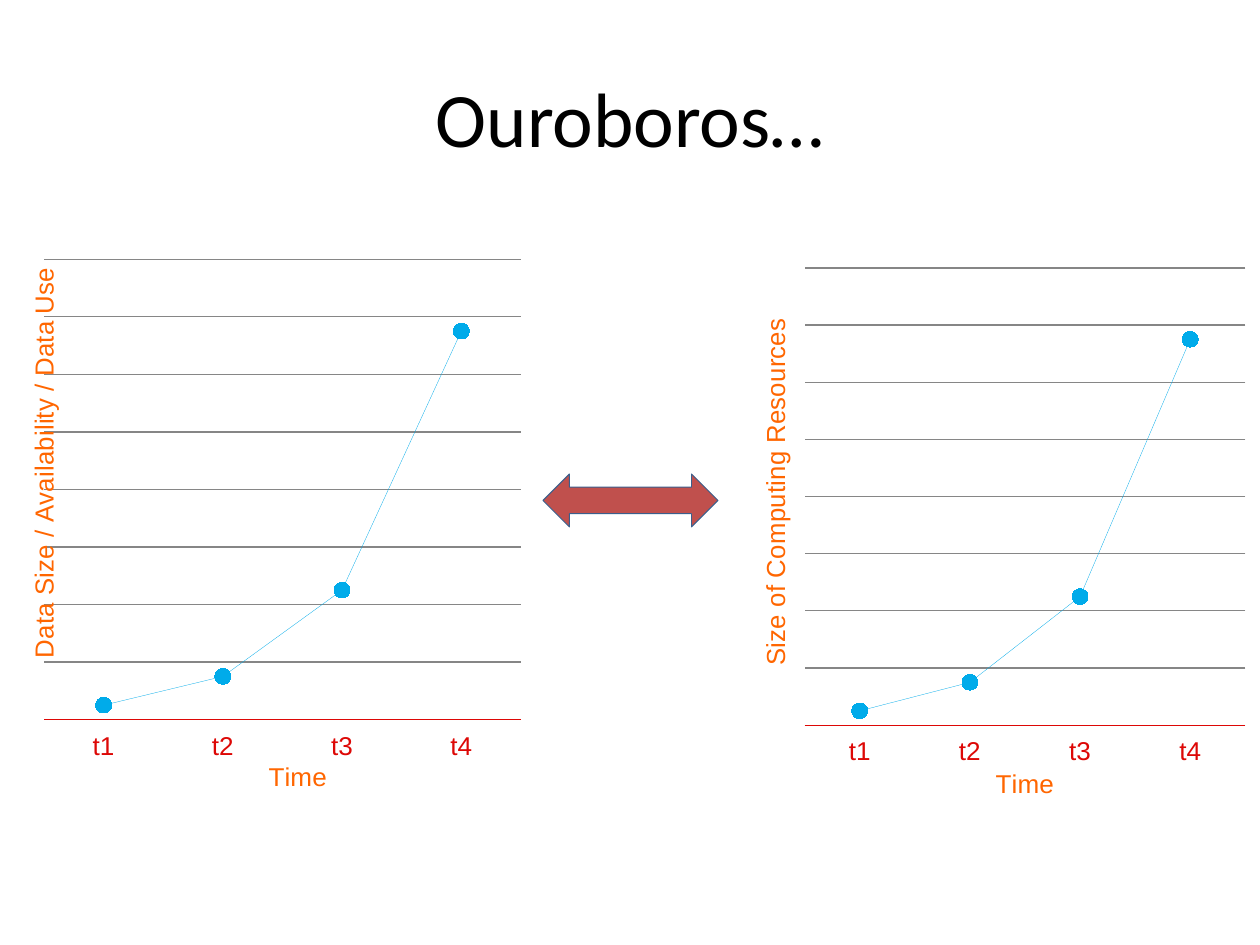
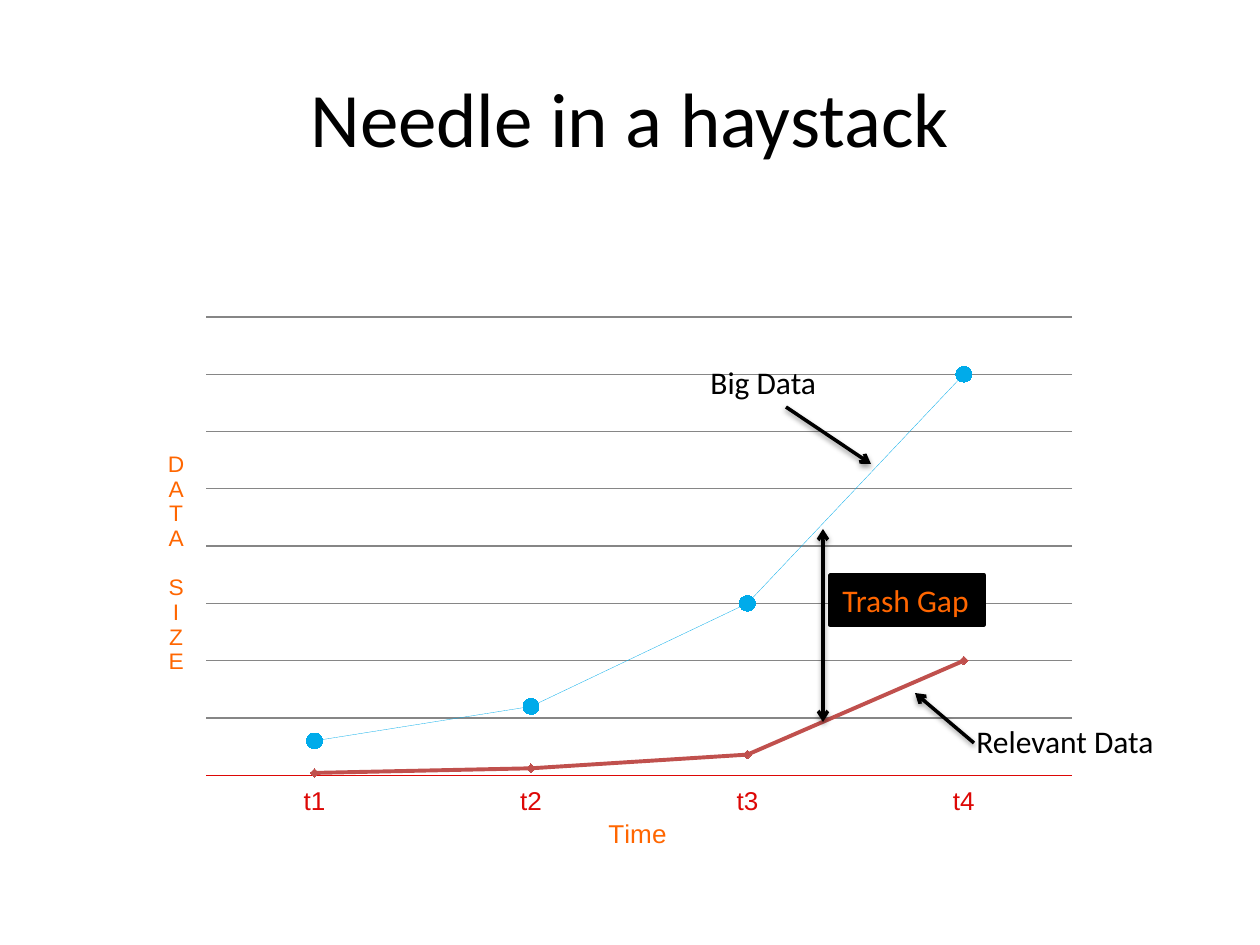
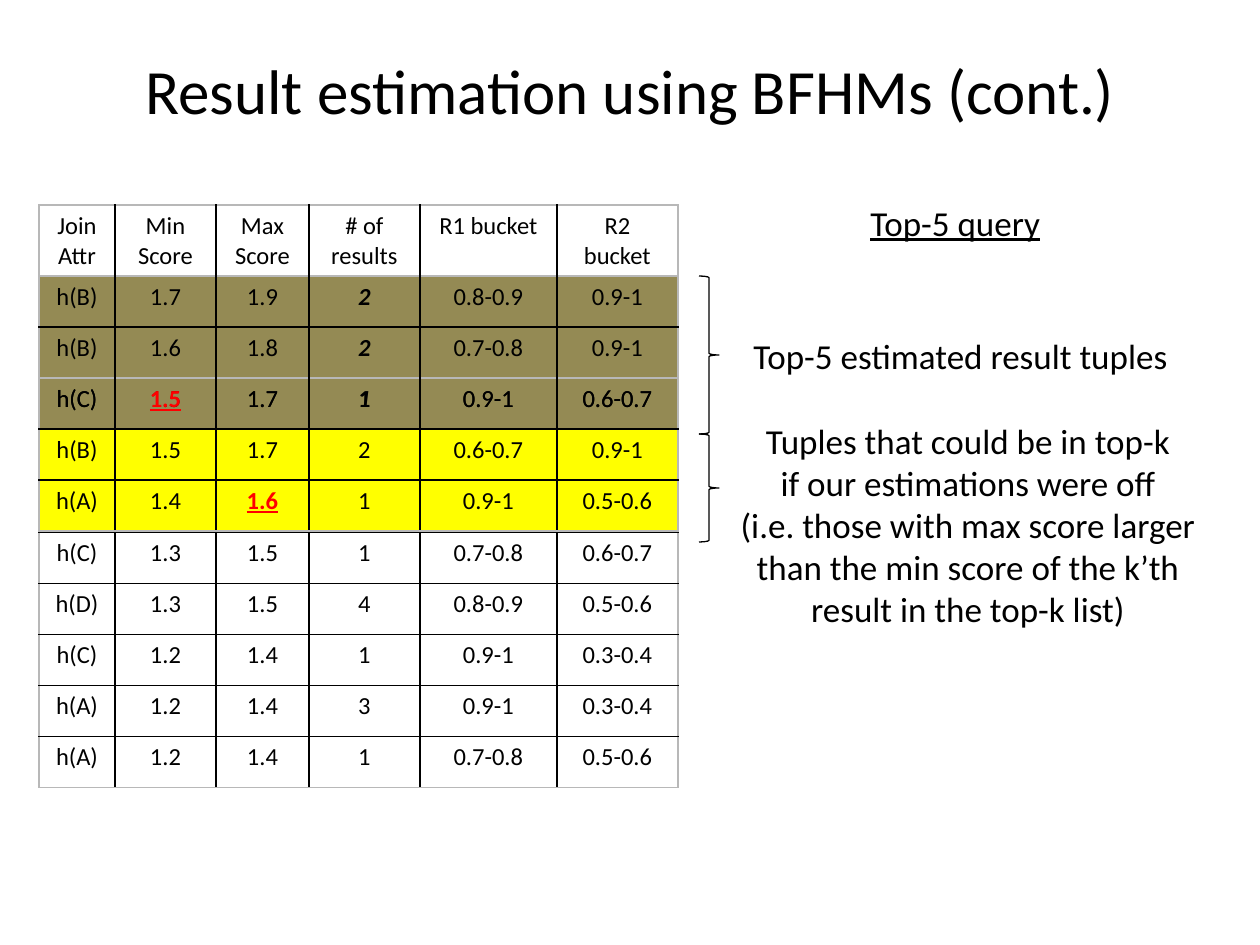
import pptx
import pptx.chart.data
import pptx.dml.color
import pptx.enum.chart
import pptx.enum.shapes
import pptx.enum.text
import pptx.oxml
import pptx.oxml.ns
import pptx.util

PX_PER_INCH = 126
COLORS = {
    "text": "000000", "accent": "FF6600", "blue": "00ABEA", "red": "C0504D",
    "axis": "DD0806", "grid": "868686", "arrow_line": "3A5F8C", "edge": "B8B8B8",
    "olive": "948A54", "yellow": "FFFF00", "alert": "FF0000",
}
SHAPES = pptx.enum.shapes.MSO_SHAPE
CENTER = pptx.enum.text.PP_ALIGN.CENTER
LEFT = pptx.enum.text.PP_ALIGN.LEFT
Pt = pptx.util.Pt
qn = pptx.oxml.ns.qn

TIMES = ["t1", "t2", "t3", "t4"]
GROWTH = [("Region 1", [5, 15, 45, 135])]
DATA_SIZES = [("Series 1", [30, 60, 150, 350]), ("Series 2", [2, 6, 18, 100])]

COLUMN_WIDTHS = [76, 101, 93, 111, 137, 121]
HEADER_H, ROW_H = 71, 51
TABLE_LEFT, TABLE_TOP = 39, 205
HEADER = ["Join Attr", "Min Score", "Max Score", "# of results", "R1 bucket", "R2 bucket"]
RESULTS = [
    ["h(B)", "1.7", "1.9", "2", "0.8-0.9", "0.9-1"],
    ["h(B)", "1.6", "1.8", "2", "0.7-0.8", "0.9-1"],
    ["h(C)", "1.5", "1.7", "1", "0.9-1", "0.6-0.7"],
    ["h(B)", "1.5", "1.7", "2", "0.6-0.7", "0.9-1"],
    ["h(A)", "1.4", "1.6", "1", "0.9-1", "0.5-0.6"],
    ["h(C)", "1.3", "1.5", "1", "0.7-0.8", "0.6-0.7"],
    ["h(D)", "1.3", "1.5", "4", "0.8-0.9", "0.5-0.6"],
    ["h(C)", "1.2", "1.4", "1", "0.9-1", "0.3-0.4"],
    ["h(A)", "1.2", "1.4", "3", "0.9-1", "0.3-0.4"],
    ["h(A)", "1.2", "1.4", "1", "0.7-0.8", "0.5-0.6"],
]


def px(value):
    return pptx.util.Emu(round(value * 914400 / PX_PER_INCH))


def rgb(name):
    return pptx.dml.color.RGBColor.from_string(COLORS[name])


def xml(tag, body="", attrs=""):
    prefix = tag.split(":")[0]
    spaces = pptx.oxml.ns.nsdecls(*{prefix, "a"})
    return pptx.oxml.parse_xml(f"<{tag} {spaces} {attrs}>{body}</{tag}>")


def set_layout(parent, index, **values):
    """Give a chart part a manual layout, in fractions of the chart."""
    old = parent.find(qn("c:layout"))
    if old is not None:
        parent.remove(old)
    body = "".join(f'<c:{key} val="{value}"/>' for key, value in values.items())
    parent.insert(index, xml("c:layout", f"<c:manualLayout>{body}</c:manualLayout>"))


class Deck:
    def __init__(self):
        self.prs = pptx.Presentation()
        self.prs.slide_width = px(1260)
        self.prs.slide_height = px(945)
        self.s = None

    def slide(self, title, top=38, size=44):
        self.s = self.prs.slides.add_slide(self.prs.slide_layouts[5])
        sp = self.s.shapes.title
        sp.left, sp.top, sp.width, sp.height = map(px, (63, top, 1134, 158))
        sp.text_frame.vertical_anchor = pptx.enum.text.MSO_ANCHOR.MIDDLE
        self.put_text(sp.text_frame, title, size, align=CENTER)

    def font(self, font, size, color="text", name="Calibri"):
        font.name = name
        font.size = Pt(size)
        font.color.rgb = rgb(color)
        return font

    def put_text(self, tf, text, size, color="text", align=LEFT, underline=None,
                 name="Calibri"):
        tf.text = text
        for p in tf.paragraphs:
            p.alignment = align
            self.font(p.font, size, color, name).underline = underline

    def fit(self, tf):
        tf.word_wrap = False
        tf.auto_size = pptx.enum.text.MSO_AUTO_SIZE.SHAPE_TO_FIT_TEXT

    def text(self, box, text, size, **style):
        tf = self.s.shapes.add_textbox(*map(px, box)).text_frame
        self.put_text(tf, text, size, **style)
        self.fit(tf)

    def shape(self, kind, box, line, width, fill=None):
        sp = self.s.shapes.add_shape(kind, *map(px, box))
        sp.shadow.inherit = False
        if fill:
            sp.fill.solid()
            sp.fill.fore_color.rgb = rgb(fill)
        else:
            sp.fill.background()
        sp.line.color.rgb = rgb(line)
        sp.line.width = Pt(width)
        return sp

    def label(self, box, text, size, color, fill):
        tf = self.shape(SHAPES.RECTANGLE, box, fill, 2, fill).text_frame
        self.put_text(tf, text, size, color)
        self.fit(tf)

    def arrow(self, start, end, ends=("tailEnd",)):
        straight = pptx.enum.shapes.MSO_CONNECTOR.STRAIGHT
        line = self.s.shapes.add_connector(straight, *map(px, start + end))
        line.line.color.rgb = rgb("text")
        line.line.width = Pt(2)
        for tag in ends:
            line.line._get_or_add_ln().append(xml(f"a:{tag}", attrs='type="arrow"'))
        line._element.spPr.append(xml(
            "a:effectLst",
            f'<a:outerShdw blurRad="{Pt(3.1)}" dist="{Pt(1.6)}" dir="5400000" rotWithShape="0">'
            f'<a:srgbClr val="{COLORS["text"]}"><a:alpha val="38000"/></a:srgbClr></a:outerShdw>'))

    def axis_title(self, axis, text, size, place, extent, body):
        """Place an axis title by its left and top px inside the chart."""
        title = axis.axis_title
        self.put_text(title.text_frame, text, size, "accent", CENTER, name="Arial")
        title.text_frame.paragraphs[0].font.bold = False
        for key, value in body.items():
            title._element.find(".//" + qn("a:bodyPr")).set(key, value)
        x, y = (round(at / full, 3) for at, full in zip(place, extent))
        set_layout(title._element, 1, xMode="edge", yMode="edge", x=x, y=y)

    def chart(self, box, series, top_value, plot, time_at, value_title, value_at,
              value_size=14.9, value_body=None):
        data = pptx.chart.data.CategoryChartData()
        data.categories = TIMES
        for name, values in series:
            data.add_series(name, values)
        kinds = pptx.enum.chart
        chart = self.s.shapes.add_chart(
            kinds.XL_CHART_TYPE.LINE_MARKERS, *map(px, box), data).chart
        chart.has_title = chart.has_legend = False
        self.font(chart.font, 13.6, name="Arial")
        left, width = plot
        set_layout(chart._chartSpace.find(".//" + qn("c:plotArea")), 0, layoutTarget="inner",
                   xMode="edge", yMode="edge", x=left, y=0.1, w=width, h=0.776)

        times = chart.category_axis
        times.major_tick_mark = kinds.XL_TICK_MARK.NONE
        times.tick_label_position = kinds.XL_TICK_LABEL_POSITION.LOW
        times.format.line.color.rgb = rgb("axis")
        times.format.line.width = Pt(0.68)
        self.font(times.tick_labels.font, 14.9, "axis", "Arial")
        self.axis_title(times, "Time", 14.9, time_at, box[2:], {})

        values = chart.value_axis
        values.visible = False
        values.minimum_scale, values.maximum_scale = 0, top_value
        values.major_unit = top_value / 8
        values.has_major_gridlines = True
        values.major_gridlines.format.line.color.rgb = rgb("grid")
        values.major_gridlines.format.line.width = Pt(0.75)
        self.axis_title(values, value_title, value_size, value_at, box[2:],
                        value_body or {"rot": "-5400000", "vert": "horz"})

        markers = kinds.XL_MARKER_STYLE
        looks = [("blue", 0.17, markers.CIRCLE, 9), ("red", 2.25, markers.DIAMOND, 5)]
        chart.plots[0].vary_by_categories = False
        for ser, (color, line_width, marker, size) in zip(chart.plots[0].series, looks):
            ser.smooth = False
            ser.format.line.color.rgb = rgb(color)
            ser.format.line.width = Pt(line_width)
            ser.marker.style, ser.marker.size = marker, size
            ser.marker.format.fill.solid()
            ser.marker.format.fill.fore_color.rgb = rgb(color)
            ser.marker.format.line.color.rgb = rgb(color)

    def border(self, cell, side, color):
        cell._tc.get_or_add_tcPr().append(xml(
            f"a:{side}", f'<a:solidFill><a:srgbClr val="{COLORS[color]}"/></a:solidFill>',
            f'w="{Pt(1)}"'))

    def table(self, top, rows, heights, fills, counts=(), alerts=()):
        """Counts are rows with a bold italic count; alerts are red (row, column) cells."""
        box = (TABLE_LEFT, top, sum(COLUMN_WIDTHS), sum(heights))
        table = self.s.shapes.add_table(len(rows), len(COLUMN_WIDTHS), *map(px, box)).table
        table.first_row = table.horz_banding = False
        for column, width in zip(table.columns, COLUMN_WIDTHS):
            column.width = px(width)
        last_row, last_col = len(rows) - 1, len(COLUMN_WIDTHS) - 1
        for r, row in enumerate(rows):
            table.rows[r].height = px(heights[r])
            for c, text in enumerate(row):
                cell = table.cell(r, c)
                outer = {"lnL": c == 0, "lnR": c == last_col, "lnT": r == 0, "lnB": r == last_row}
                for side, is_outer in outer.items():
                    self.border(cell, side, "edge" if is_outer else "text")
                if fills[r]:
                    cell.fill.solid()
                    cell.fill.fore_color.rgb = rgb(fills[r])
                else:
                    cell.fill.background()
                alert = (r, c) in alerts
                self.put_text(cell.text_frame, text, 14, "alert" if alert else "text",
                              CENTER, underline=alert)
                count = c == 3 and r in counts
                font = cell.text_frame.paragraphs[0].font
                font.bold, font.italic = alert or count, count


def ouroboros(deck):
    deck.slide("Ouroboros…")
    deck.chart((13, 200, 509, 600), GROWTH, 160, (0.061, 0.937), (251, 562),
               "Data Size / Availability / Data Use", (9, 68))
    deck.chart((738, 209, 509, 598), GROWTH, 160, (0.131, 0.866), (253, 562),
               "Size of Computing Resources", (16, 111))
    deck.shape(SHAPES.LEFT_RIGHT_ARROW, (543, 474, 175, 53), "arrow_line", 0.5, "red")


def haystack(deck):
    deck.slide("Needle in a haystack")
    deck.chart((150, 258, 924, 598), DATA_SIZES, 400, (0.061, 0.937), (454, 561),
               "DATA SIZE", (14, 191), 13, {"rot": "0", "vert": "wordArtVert"})
    deck.arrow((786, 407), (871, 464))
    deck.text((698, 357, 132, 50), "Big Data", 18)
    deck.text((964, 716, 207, 50), "Relevant Data", 18)
    deck.arrow((974, 743), (915, 693))
    deck.arrow((823, 529), (823, 722), ("headEnd", "tailEnd"))
    deck.label((830, 575, 154, 50), "Trash Gap", 18, "accent", "text")


def estimation(deck):
    deck.slide("Result estimation using BFHMs (cont.)", top=10, size=36)
    first_row = TABLE_TOP + HEADER_H
    deck.table(TABLE_TOP, [HEADER] + RESULTS, [HEADER_H] + [ROW_H] * len(RESULTS),
               [None] * (len(RESULTS) + 1))
    deck.text((858, 195, 197, 55), "Top-5 query", 20, underline=True)
    deck.table(first_row, RESULTS[:3], [ROW_H] * 3, ["olive"] * 3, counts=range(3))
    deck.shape(SHAPES.RIGHT_BRACE, (699, first_row, 20, 158), "text", 0.75)
    deck.text((741, 328, 445, 55), "Top-5 estimated result tuples", 20)
    deck.table(first_row + 2 * ROW_H, RESULTS[2:5], [ROW_H] * 3, [None, "yellow", "yellow"],
               alerts=[(0, 1), (2, 2)])
    deck.shape(SHAPES.RIGHT_BRACE, (699, first_row + 158, 20, 108), "text", 0.75)
    deck.text((726, 413, 484, 224),
              "Tuples that could be in top-k\vif our estimations were off\v"
              "(i.e. those with max score larger\nthan the min score of the k’th\n"
              "result in the top-k list)", 20, align=CENTER)


def main():
    deck = Deck()
    ouroboros(deck)
    haystack(deck)
    estimation(deck)
    deck.prs.save("out.pptx")


if __name__ == "__main__":
    main()
